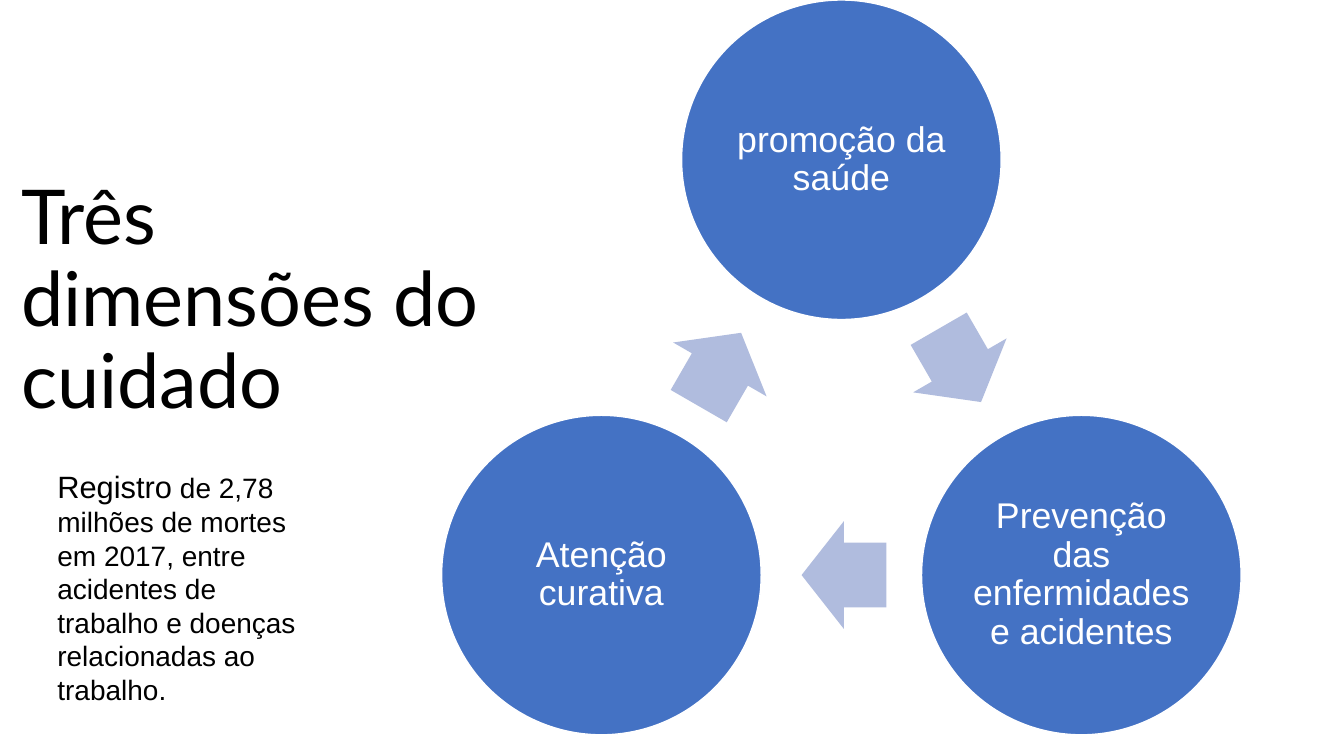
from pptx import Presentation
from pptx.dml.color import RGBColor
from pptx.enum.shapes import MSO_SHAPE
from pptx.enum.text import MSO_ANCHOR, MSO_AUTO_SIZE, PP_ALIGN
from pptx.util import Emu, Pt

OVAL, ARROW = MSO_SHAPE.OVAL, MSO_SHAPE.RIGHT_ARROW
TOP, MID, LOW = MSO_ANCHOR.TOP, MSO_ANCHOR.MIDDLE, MSO_ANCHOR.BOTTOM
LEFT, CENTER = PP_ALIGN.LEFT, PP_ALIGN.CENTER
NONE = MSO_AUTO_SIZE.NONE
PX = 9144
COLORS = {"disc": "4472C4", "arrow": "B0BCDE", "white": "FFFFFF", "black": "000000"}


def color(name):
    return RGBColor.from_string(COLORS[name])


def write(shape, *runs, font="Arial", ink="black", align=LEFT, anchor=TOP,
          space=1.0, pad=(10, 5)):
    frame = shape.text_frame
    frame.word_wrap = True
    frame.auto_size = NONE
    frame.vertical_anchor = anchor
    frame.margin_left = frame.margin_right = Emu(pad[0] * PX)
    frame.margin_top = frame.margin_bottom = Emu(pad[1] * PX)
    para = frame.paragraphs[0]
    para.alignment = align
    para.line_spacing = space
    for text, size in runs:
        run = para.add_run()
        run.text = text
        run.font.name = font
        run.font.size = Pt(size)
        run.font.color.rgb = color(ink)


deck = Presentation()
deck.slide_width, deck.slide_height = Emu(2666 * PX), Emu(1500 * PX)
slide = deck.slides.add_slide(deck.slide_layouts[5])
shapes = slide.shapes

title = shapes.title
title.left, title.top = Emu(32 * PX), Emu(557 * PX)
title.width, title.height = Emu(937 * PX), Emu(290 * PX)
write(title, ("Três dimensões do cuidado", 108), font="Lato", anchor=LOW, space=0.9)

SIDE = 634
STEPS = [
    ("promoção da saúde", 1352, 0, 1820, 618, 60),
    ("Prevenção das enfermidades e acidentes", 1828, 824, 1590, 1034, 180),
    ("Atenção curativa", 876, 824, 1344, 626, 300),
]
for label, left, top, x, y, turn in STEPS:
    disc = shapes.add_shape(OVAL, left * PX, top * PX, SIDE * PX, SIDE * PX)
    disc.shadow.inherit = False
    disc.fill.solid()
    disc.fill.fore_color.rgb = color("disc")
    disc.line.color.rgb = color("white")
    disc.line.width = Pt(2)
    write(disc, (label, 51), ink="white", align=CENTER, anchor=MID, space=0.9, pad=(7, 7))

    arrow = shapes.add_shape(ARROW, x * PX, y * PX, 168 * PX, 214 * PX)
    arrow.shadow.inherit = False
    arrow.adjustments[0] = 0.6
    arrow.adjustments[1] = 0.5
    arrow.rotation = turn
    arrow.fill.solid()
    arrow.fill.fore_color.rgb = color("arrow")
    arrow.line.fill.background()

note = shapes.add_textbox(104 * PX, 923 * PX, 520 * PX, 488 * PX)
write(note, ("Registro", 44),
      (" de 2,78 milhões de mortes em 2017, entre acidentes de trabalho "
       "e doenças relacionadas ao trabalho.", 40))

deck.save("out.pptx")
